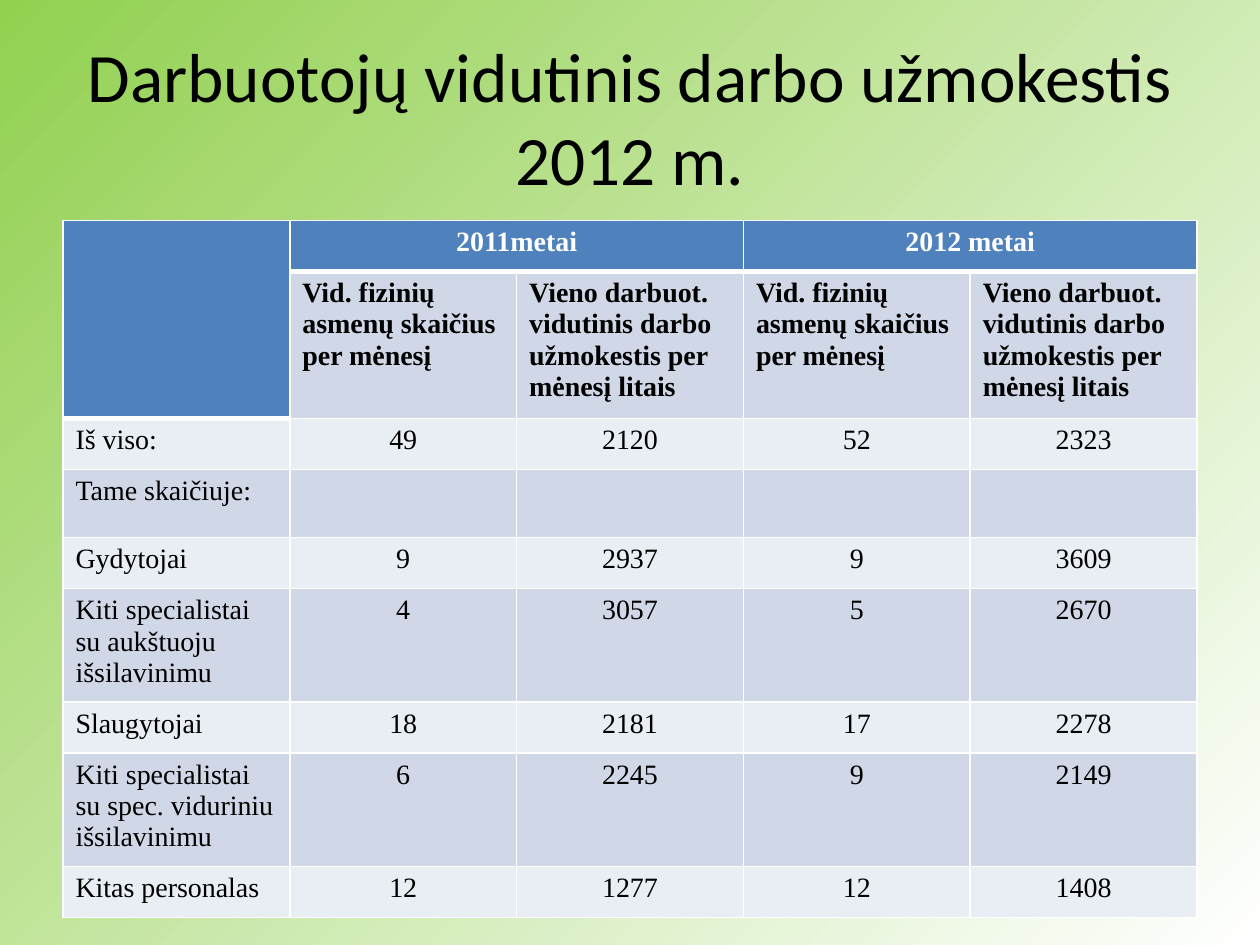
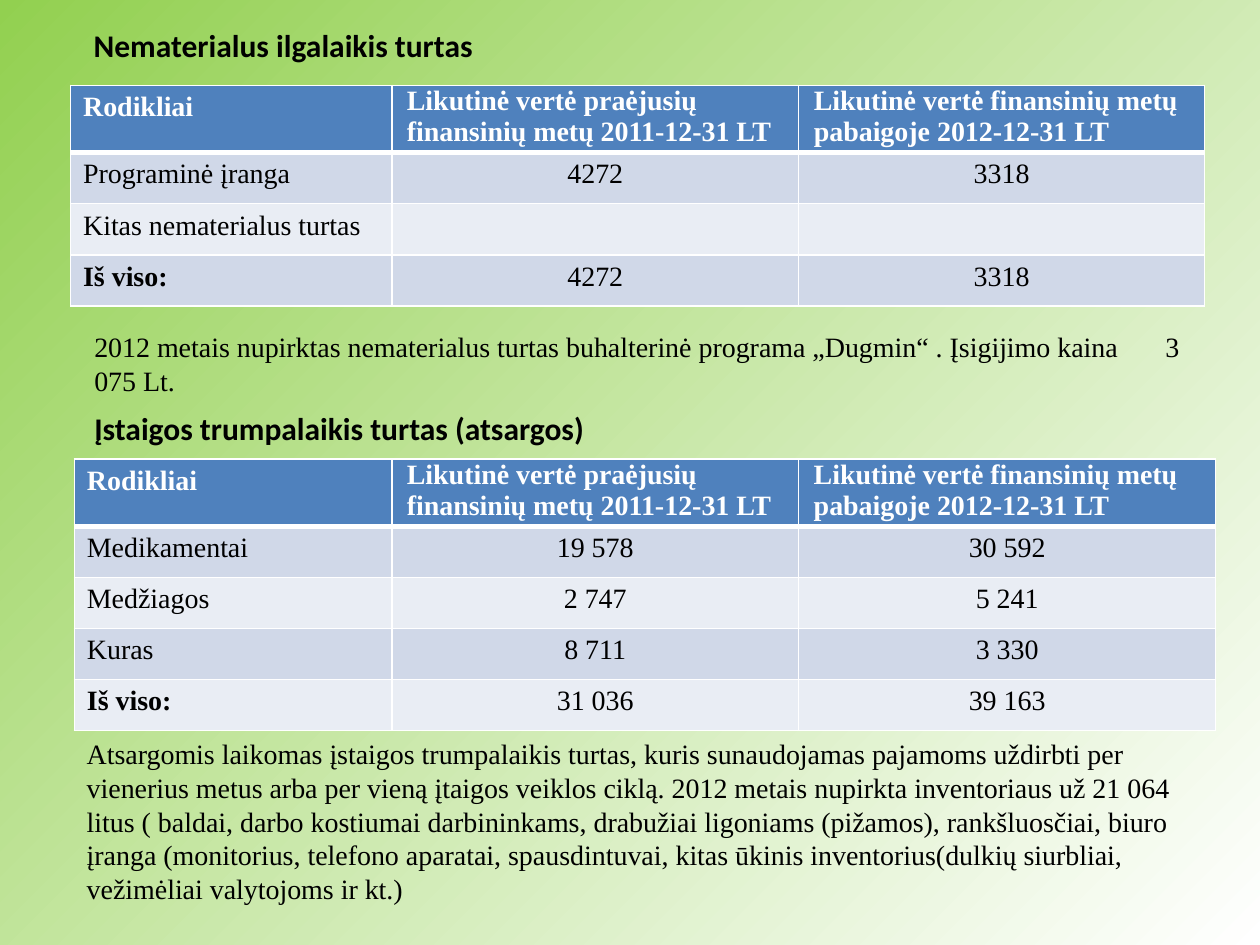
"""Build two slides of pay and asset tables on a green gradient."""
import pptx
import pptx.dml.color
import pptx.enum.text
import pptx.oxml
import pptx.oxml.ns
import pptx.util

Pt = pptx.util.Pt
RGB = pptx.dml.color.RGBColor
ALIGN = pptx.enum.text.PP_ALIGN
ANCHOR = pptx.enum.text.MSO_ANCHOR

GREEN = RGB(0x92, 0xD0, 0x50)
WHITE = RGB(0xFF, 0xFF, 0xFF)
BLACK = RGB(0, 0, 0)
HEAD_BLUE = RGB(0x4F, 0x81, 0xBD)
BANDS = [RGB(0xE9, 0xED, 0xF4), RGB(0xD0, 0xD8, 0xE8)]
SANS, SERIF = "Calibri", "Times New Roman"
BODY_SIZE = 16
ROW = 29.2
TOTAL = "Iš viso:"

PAY_TITLE = "Darbuotojų vidutinis darbo užmokestis 2012 m."
STAFF = "Vid. fizinių asmenų skaičius per mėnesį"
WAGE = "Vieno darbuot. vidutinis darbo užmokestis per mėnesį litais"
PAY_ROWS = [
    ("", "2011metai", "", "2012 metai", ""),
    ("", STAFF, WAGE, STAFF, WAGE),
    (TOTAL, "49", "2120", "52", "2323"),
    ("Tame skaičiuje:", "", "", "", ""),
    ("Gydytojai", "9", "2937", "9", "3609"),
    ("Kiti specialistai su aukštuoju išsilavinimu", "4", "3057", "5", "2670"),
    ("Slaugytojai", "18", "2181", "17", "2278"),
    ("Kiti specialistai su spec. viduriniu išsilavinimu", "6", "2245", "9", "2149"),
    ("Kitas personalas", "12", "1277", "12", "1408"),
]
PAY_HEIGHTS = [ROW, 78.2, ROW, 38.8, ROW, 60.5, ROW, 60.5, ROW]
PAY_MERGES = [((0, 0), (1, 0)), ((0, 1), (0, 2)), ((0, 3), (0, 4))]

ASSET_HEAD = (
    "Rodikliai",
    "Likutinė vertė praėjusių finansinių metų 2011-12-31 LT",
    "Likutinė vertė finansinių metų pabaigoje 2012-12-31 LT",
)
INTANGIBLE_ROWS = [
    ASSET_HEAD,
    ("Programinė įranga", "4272", "3318"),
    ("Kitas nematerialus turtas", "", ""),
    (TOTAL, "4272", "3318"),
]
STOCK_ROWS = [
    ASSET_HEAD,
    ("Medikamentai", "19 578", "30 592"),
    ("Medžiagos", "2 747", "5 241"),
    ("Kuras", "8 711", "3 330"),
    (TOTAL, "31 036", "39 163"),
]
INTANGIBLE_TITLE = "Nematerialus ilgalaikis turtas"
STOCK_TITLE = "Įstaigos trumpalaikis turtas (atsargos)"
PURCHASE_NOTE = (
    "2012 metais nupirktas nematerialus turtas buhalterinė programa „Dugmin“ . "
    "Įsigijimo kaina\t3 075 Lt."
)
STOCK_NOTE = (
    "Atsargomis laikomas įstaigos trumpalaikis turtas, kuris sunaudojamas pajamoms "
    "uždirbti per vienerius metus arba per vieną įtaigos veiklos ciklą. 2012 metais "
    "nupirkta inventoriaus už 21 064 litus ( baldai, darbo kostiumai darbininkams, "
    "drabužiai ligoniams (pižamos), rankšluosčiai, biuro įranga (monitorius, telefono "
    "aparatai, spausdintuvai, kitas ūkinis inventorius(dulkių siurbliai, vežimėliai "
    "valytojoms ir kt.)"
)


def add_slide(prs):
    s = prs.slides.add_slide(prs.slide_layouts[6])
    fill = s.background.fill
    fill.gradient()
    fill.gradient_angle = 315
    for stop, color in zip(fill.gradient_stops, (GREEN, WHITE)):
        stop.color.rgb = color
    return s


def write(tf, text, size=BODY_SIZE, font=SERIF, color=BLACK, bold=False, align=ALIGN.LEFT):
    p = tf.paragraphs[0]
    p.alignment = align
    r = p.add_run()
    r.text = text
    r.font.size = Pt(size)
    r.font.name = font
    r.font.bold = bold
    r.font.color.rgb = color
    return p


def add_text(s, box, text, anchor=ANCHOR.TOP, **style):
    tf = s.shapes.add_textbox(*map(Pt, box)).text_frame
    tf.word_wrap = True
    tf.vertical_anchor = anchor
    return write(tf, text, **style)


def add_tab_stop(p, pos):
    ns = pptx.oxml.ns.nsdecls("a")
    p._p.get_or_add_pPr().append(pptx.oxml.parse_xml(
        f'<a:tabLst {ns}><a:tab pos="{Pt(pos)}" algn="l"/></a:tabLst>'))


def set_borders(cell, top, bottom):
    tcPr = cell._tc.get_or_add_tcPr()
    ns = pptx.oxml.ns.nsdecls("a")
    for side, width in (("L", 1), ("R", 1), ("T", top), ("B", bottom)):
        tcPr.append(pptx.oxml.parse_xml(
            f'<a:ln{side} {ns} w="{Pt(width)}"><a:solidFill>'
            f'<a:srgbClr val="{WHITE}"/></a:solidFill></a:ln{side}>'))


def add_table(s, left, top, widths, heights, rows, head_rows, merges=()):
    """Draw rows; head_rows gives the number of blue rows in each column."""
    tbl = s.shapes.add_table(len(rows), len(widths), Pt(left), Pt(top),
                             Pt(sum(widths)), Pt(sum(heights))).table
    for col, width in zip(tbl.columns, widths):
        col.width = Pt(width)
    for row, height in zip(tbl.rows, heights):
        row.height = Pt(height)
    for i, values in enumerate(rows):
        for j, text in enumerate(values):
            cell = tbl.cell(i, j)
            is_head = i < head_rows[j]
            set_borders(cell, 3 if i == head_rows[j] else 1, 3 if is_head else 1)
            cell.fill.solid()
            cell.fill.fore_color.rgb = HEAD_BLUE if is_head else BANDS[i % 2]
            if not text:
                continue
            is_label = text in (STAFF, WAGE)
            left_side = j == 0 or is_label or text in ASSET_HEAD
            write(cell.text_frame, text,
                  color=WHITE if is_head else BLACK,
                  bold=is_head or is_label or (text == TOTAL and rows[0] is ASSET_HEAD),
                  align=ALIGN.LEFT if left_side else ALIGN.CENTER)
            if text in ASSET_HEAD[1:]:
                cell.margin_left = cell.margin_right = Pt(8.64)
                cell.margin_top = cell.margin_bottom = Pt(0)
    for first, last in merges:
        tbl.cell(*first).merge(tbl.cell(*last))


def build_pay_slide(prs):
    s = add_slide(prs)
    add_text(s, (36, 21.6, 648, 90), PAY_TITLE, ANCHOR.MIDDLE,
             size=39.6, font=SANS, align=ALIGN.CENTER)
    add_table(s, 36, 126, [129.6] * 5, PAY_HEIGHTS, PAY_ROWS, [2, 1, 1, 1, 1], PAY_MERGES)


def build_assets_slide(prs):
    s = add_slide(prs)
    heading = dict(size=18, font=SANS, bold=True)
    add_text(s, (46.5, 11.5, 557, 29), INTANGIBLE_TITLE, **heading)
    add_table(s, 40.3, 48.8, [183.6, 232.5, 231.9], [35.3] + [ROW] * 3,
              INTANGIBLE_ROWS, [1] * 3)
    p = add_text(s, (46.8, 185, 636.5, 46), PURCHASE_NOTE)
    add_tab_stop(p, 612)
    add_text(s, (46.8, 230.4, 635, 29), STOCK_TITLE, **heading)
    add_table(s, 42.5, 262.3, [181.4, 232.5, 238.3], [37.8] + [ROW] * 4,
              STOCK_ROWS, [1] * 3)
    add_text(s, (42.5, 417.6, 640.8, 104.4), STOCK_NOTE)


def main():
    prs = pptx.Presentation()
    prs.slide_width, prs.slide_height = Pt(720), Pt(540)
    build_pay_slide(prs)
    build_assets_slide(prs)
    prs.save("out.pptx")


if __name__ == "__main__":
    main()
